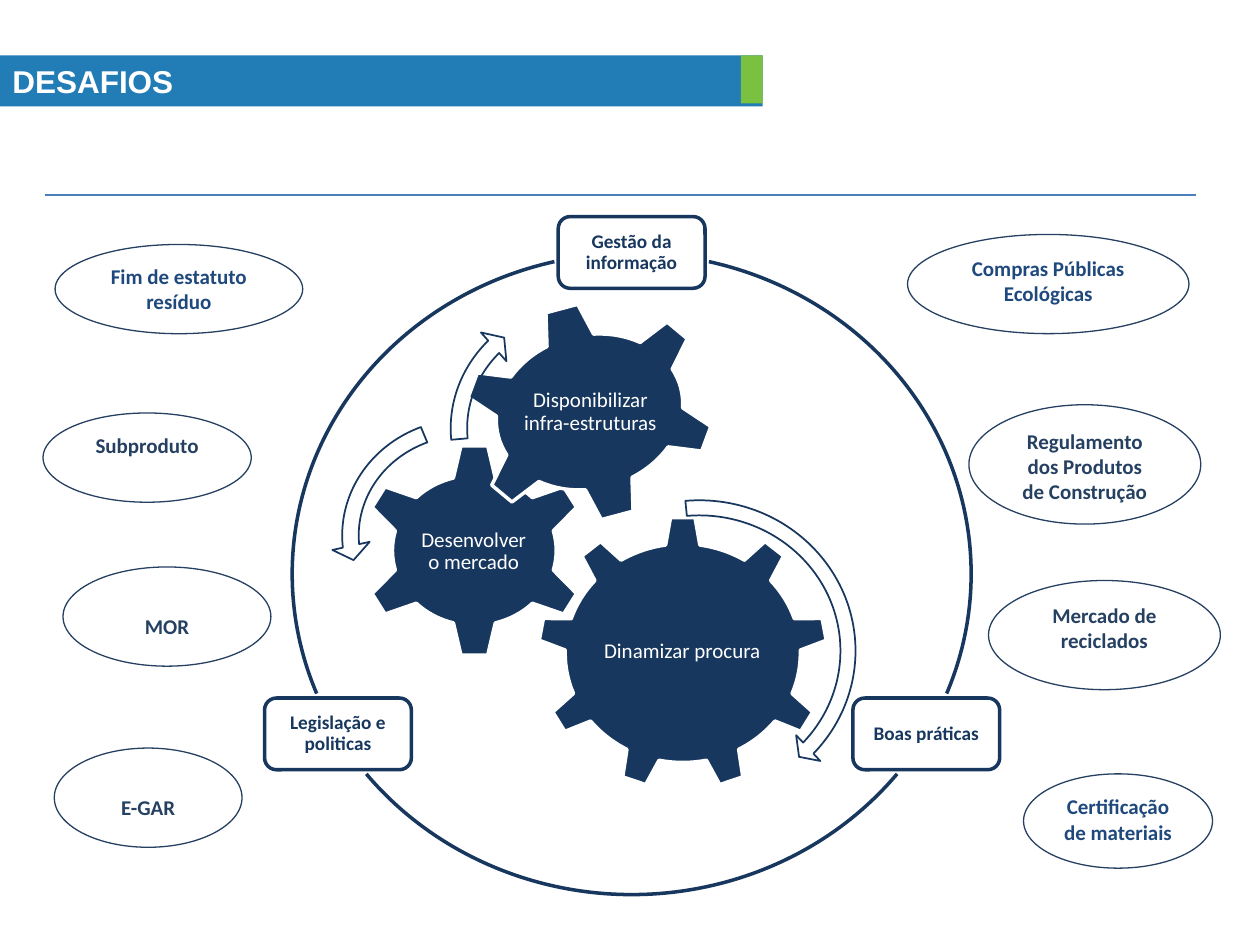
from lxml.etree import SubElement
from pptx import Presentation
from pptx.dml.color import RGBColor
from pptx.enum.shapes import MSO_CONNECTOR, MSO_SHAPE
from pptx.enum.text import MSO_ANCHOR, PP_ALIGN
from pptx.oxml.ns import qn
from pptx.util import Pt

WHITE = RGBColor(0xFF, 0xFF, 0xFF)
NAVY = RGBColor(0x17, 0x37, 0x5E)
SLATE = RGBColor(0x25, 0x40, 0x61)
INDIGO = RGBColor(0x1F, 0x49, 0x7D)
BANNER_BLUE = RGBColor(0x22, 0x7C, 0xB5)
BANNER_GREEN = RGBColor(0x7A, 0xC1, 0x42)
RULE_BLUE = RGBColor(0x4B, 0x7E, 0xBC)

LINE_HEIGHT = 14.65  # one line of 12 pt Calibri
DEGREE = 0.6  # one degree in adjustment units

# left, top, width, height
RING = (167, 144.7, 388, 366.5)
RING_ARCS = [(283.9, 20.8), (37, 143), (159.2, 256.1)]  # start and end degrees
RING_LABELS = [
    ("Gestão da informação", 319, 123.8),
    ("Boas práticas", 487.4, 398.9),
    ("Legislação e politicas", 151.2, 398.9),
]
GEARS = [
    ("Dinamizar procura", MSO_SHAPE.GEAR_9, 0,
     (307.4, 295.2, 165.6, 156.2), (340.6, 331.9, 98.6, 80.6)),
    ("Desenvolver o mercado", MSO_SHAPE.GEAR_6, 0,
     (205.9, 253.4, 130.3, 122.4), (238.3, 285.1, 64.8, 60.5)),
    ("Disponibilizar infra-estruturas", MSO_SHAPE.GEAR_6, 345,
     (264.2, 172.8, 145.4, 125.3), (297.4, 199.4, 79.9, 72)),
]
TURN_ARROWS = [
    (MSO_SHAPE.CIRCULAR_ARROW, (304.6, 280.1, 190.1, 183.6),
     (0.047, 2.99, 25.066, 158.821, 0.055)),
    (MSO_SHAPE.LEFT_CIRCULAR_ARROW, (189.4, 233.3, 154.1, 145.4),
     (0.065, 4.3, 104.891, 148.378, 0.075)),
    (MSO_SHAPE.CIRCULAR_ARROW, (251.3, 166.3, 165.6, 157),
     (0.06, 3.941, 133.138, 105.082, 0.07)),
]
# text, colour, lines left free above the text, box
TOPICS = [
    ("Fim de estatuto resíduo", INDIGO, 0, (31.5, 139.7, 141.5, 51)),
    ("Subproduto", SLATE, 0, (24.6, 236, 119, 51)),
    ("MOR", SLATE, 1, (36, 324, 118.8, 56.7)),
    ("E-GAR", SLATE, 1, (31, 427.5, 107.3, 56.7)),
    ("Compras Públicas Ecológicas", INDIGO, 0, (518.6, 134, 160.8, 56.7)),
    ("Regulamento dos Produtos de Construção", SLATE, 0,
     (553.7, 231.3, 132.5, 68.2)),
    ("Mercado de reciclados", SLATE, 0, (564.9, 331.7, 132.5, 62.4)),
    ("Certificação de materiais", INDIGO, 0, (584.9, 442.2, 108, 53.9)),
]


def add_shape(slide, kind, box, fill=None, line=None, line_width=1,
              adjustments=()):
    shape = slide.shapes.add_shape(kind, *(Pt(length) for length in box))
    shape.shadow.inherit = False
    for index, value in enumerate(adjustments):
        shape.adjustments[index] = value
    if fill is None:
        shape.fill.background()
    else:
        shape.fill.solid()
        shape.fill.fore_color.rgb = fill
    if line is None:
        shape.line.fill.background()
    else:
        shape.line.color.rgb = line
        shape.line.width = Pt(line_width)
    return shape


def write_text(shape, text, size, color, bold=False, font="Calibri",
               align=PP_ALIGN.CENTER, anchor=MSO_ANCHOR.MIDDLE, spacing=None,
               margin=None):
    frame = shape.text_frame
    frame.word_wrap = True
    frame.vertical_anchor = anchor
    if margin is not None:
        frame.margin_left = frame.margin_right = Pt(margin)
        frame.margin_top = frame.margin_bottom = Pt(margin)
    frame.text = text
    paragraph = frame.paragraphs[0]
    paragraph.alignment = align
    paragraph.line_spacing = spacing
    run_font = paragraph.runs[0].font
    run_font.name, run_font.size, run_font.bold = font, Pt(size), bold
    run_font.color.rgb = color


def add_banner(slide, left, top, width, height):
    banner = add_shape(slide, MSO_SHAPE.RECTANGLE, (left, top, width, height),
                       fill=BANNER_BLUE)
    write_text(banner, "DESAFIOS", 18, WHITE, bold=True, font="Arial",
               align=PP_ALIGN.LEFT)
    accent = 12.4
    add_shape(slide, MSO_SHAPE.RECTANGLE,
              (left + width - accent, top, accent, height - 1.6),
              fill=BANNER_GREEN)


def add_rule(slide, left, top, width):
    rule = slide.shapes.add_connector(MSO_CONNECTOR.STRAIGHT, Pt(left), Pt(top),
                                      Pt(left + width), Pt(top))
    rule.line.color.rgb = RULE_BLUE
    rule.line.width = Pt(0.75)
    SubElement(rule._element.spPr, qn("a:effectLst"))


def add_ring(slide, box):
    """Three arcs of one ellipse, with a label in each gap."""
    for start, end in RING_ARCS:
        add_shape(slide, MSO_SHAPE.ARC, box, line=NAVY, line_width=2,
                  adjustments=(start * DEGREE, end * DEGREE))
    for text, left, top in RING_LABELS:
        label = add_shape(slide, MSO_SHAPE.ROUNDED_RECTANGLE,
                          (left, top, 83.9, 41), line=NAVY, line_width=2)
        write_text(label, text, 11, NAVY, bold=True, spacing=0.9, margin=3.6)


def add_gear(slide, text, kind, rotation, box, text_box):
    gear = add_shape(slide, kind, box, fill=NAVY, line=WHITE, line_width=2)
    gear.rotation = rotation
    label = slide.shapes.add_textbox(*(Pt(length) for length in text_box))
    write_text(label, text, 12, WHITE, spacing=0.9, margin=1.2)


def add_topic(slide, text, color, free_lines, box):
    topic = add_shape(slide, MSO_SHAPE.OVAL, box, line=SLATE, line_width=0.75)
    write_text(topic, text, 12, color, bold=True, anchor=MSO_ANCHOR.TOP)
    topic.text_frame.margin_top = Pt(3.6 + free_lines * LINE_HEIGHT)


def main():
    presentation = Presentation()
    presentation.slide_width, presentation.slide_height = Pt(720), Pt(540)
    slide = presentation.slides.add_slide(presentation.slide_layouts[6])
    add_rule(slide, 25.5, 111.4, 658)
    add_ring(slide, RING)
    for gear in GEARS:
        add_gear(slide, *gear)
    for kind, box, adjustments in TURN_ARROWS:
        add_shape(slide, kind, box, line=NAVY, adjustments=adjustments)
    for topic in TOPICS:
        add_topic(slide, *topic)
    add_banner(slide, 0, 31.7, 435.8, 29.1)
    presentation.save("out.pptx")


if __name__ == "__main__":
    main()
